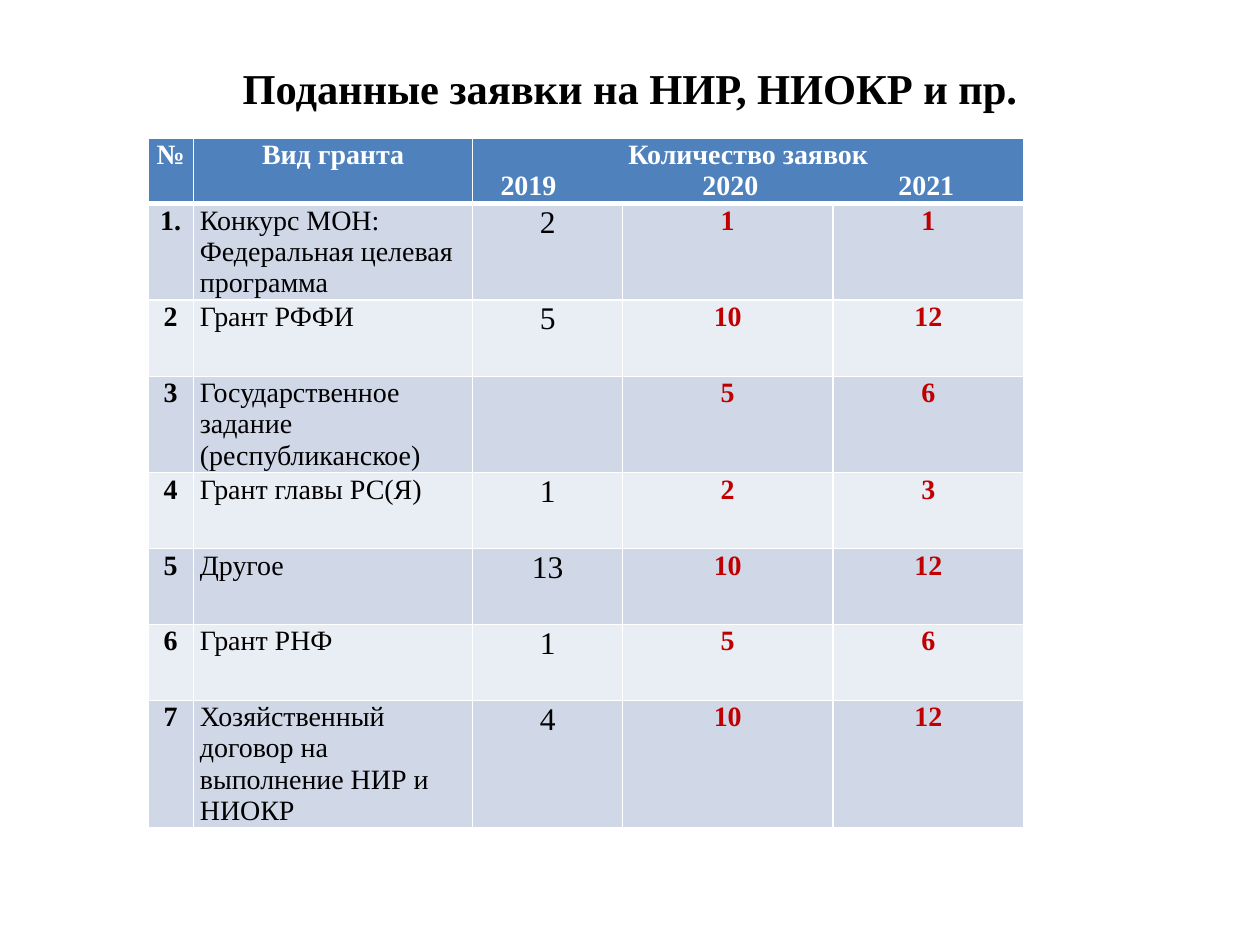
from lxml.etree import SubElement
from pptx import Presentation
from pptx.dml.color import RGBColor
from pptx.enum.text import MSO_ANCHOR, PP_ALIGN
from pptx.oxml.ns import qn
from pptx.util import Cm, Pt

TITLE = "Поданные заявки на НИР, НИОКР и пр."
HEADINGS = ["№", "Вид гранта", "Количество заявок"]
YEARS = ["2019", "2020", "2021"]
GRANTS = [
    ("1.", "Конкурс МОН: Федеральная целевая программа", "2", "1", "1"),
    ("2", "Грант РФФИ", "5", "10", "12"),
    ("3", "Государственное задание (республиканское)", "", "5", "6"),
    ("4", "Грант главы РС(Я)", "1", "2", "3"),
    ("5", "Другое", "13", "10", "12"),
    ("6", "Грант РНФ", "1", "5", "6"),
    ("7", "Хозяйственный договор на выполнение НИР и НИОКР", "4", "10", "12"),
]
COLORS = {"header": "4F81BD", "odd": "D0D8E8", "even": "E9EDF4",
          "white": "FFFFFF", "black": "000000", "red": "C00000"}
FONT = "Times New Roman"
CENTER, LEFT = PP_ALIGN.CENTER, PP_ALIGN.LEFT
# One entry per column: size, bold, colour, alignment
COLUMN_STYLES = [
    (16, True, "black", CENTER),
    (16, False, "black", LEFT),
    (18, False, "black", CENTER),
    (16, True, "red", CENTER),
    (16, True, "red", CENTER),
]
COLUMN_WIDTHS = [0.92, 5.63, 3.02, 4.24, 3.85]
ROW_HEIGHTS = [1.27, 1.94, 1.54, 1.94, 1.53, 1.53, 1.53, 2.55]
YEAR_TABS = [0.43, 4.5, 8.45]


def rgb(name):
    return RGBColor.from_string(COLORS[name])


def style(paragraph, size, bold, color, align):
    paragraph.alignment = align
    font = paragraph.font
    font.name, font.size, font.bold = FONT, Pt(size), bold
    font.color.rgb = rgb(color)


def format_cell(cell, fill, bottom_width):
    cell.margin_left = cell.margin_right = Cm(0.13)
    cell.margin_top = cell.margin_bottom = Cm(0.03)
    properties = cell._tc.get_or_add_tcPr()
    for side, width in (("L", 1), ("R", 1), ("T", 1), ("B", bottom_width)):
        line = SubElement(properties, qn(f"a:ln{side}"), w=str(Pt(width)))
        line_fill = SubElement(line, qn("a:solidFill"))
        SubElement(line_fill, qn("a:srgbClr"), val=COLORS["white"])
    cell.fill.solid()
    cell.fill.fore_color.rgb = rgb(fill)


def add_tab_stops(paragraph, positions):
    tabs = SubElement(paragraph._p.get_or_add_pPr(), qn("a:tabLst"))
    for position in positions:
        SubElement(tabs, qn("a:tab"), pos=str(Cm(position)), algn="l")


def add_title(slide):
    title = slide.shapes.title
    title.left, title.top = Cm(1.27), Cm(0.76)
    title.width, title.height = Cm(22.86), Cm(2)
    title.text_frame.text = TITLE
    title.text_frame.vertical_anchor = MSO_ANCHOR.MIDDLE
    style(title.text_frame.paragraphs[0], 24.3, True, "black", CENTER)


def add_grants_table(slide):
    table = slide.shapes.add_table(
        len(ROW_HEIGHTS), len(COLUMN_WIDTHS), Cm(2.98), Cm(2.79),
        Cm(sum(COLUMN_WIDTHS)), Cm(sum(ROW_HEIGHTS))).table
    for column, width in zip(table.columns, COLUMN_WIDTHS):
        column.width = Cm(width)
    for row, height in zip(table.rows, ROW_HEIGHTS):
        row.height = Cm(height)

    for cell in table.rows[0].cells:
        format_cell(cell, "header", 3)
    table.cell(0, 2).merge(table.cell(0, 4))
    for column, heading in enumerate(HEADINGS):
        cell = table.cell(0, column)
        cell.text = heading
        style(cell.text_frame.paragraphs[0], 16, True, "white", CENTER)
    years = table.cell(0, 2).text_frame.add_paragraph()
    years.text = "".join(f"\t{year}" for year in YEARS)
    add_tab_stops(years, YEAR_TABS)
    style(years, 16, True, "white", LEFT)

    for number, grant in enumerate(GRANTS, start=1):
        for column, (value, look) in enumerate(zip(grant, COLUMN_STYLES)):
            cell = table.cell(number, column)
            format_cell(cell, "odd" if number % 2 else "even", 1)
            cell.text = value
            style(cell.text_frame.paragraphs[0], *look)


def main():
    deck = Presentation()
    deck.slide_width, deck.slide_height = Cm(25.4), Cm(19.05)
    slide = deck.slides.add_slide(deck.slide_layouts[5])
    add_title(slide)
    add_grants_table(slide)
    deck.save("out.pptx")


if __name__ == "__main__":
    main()
